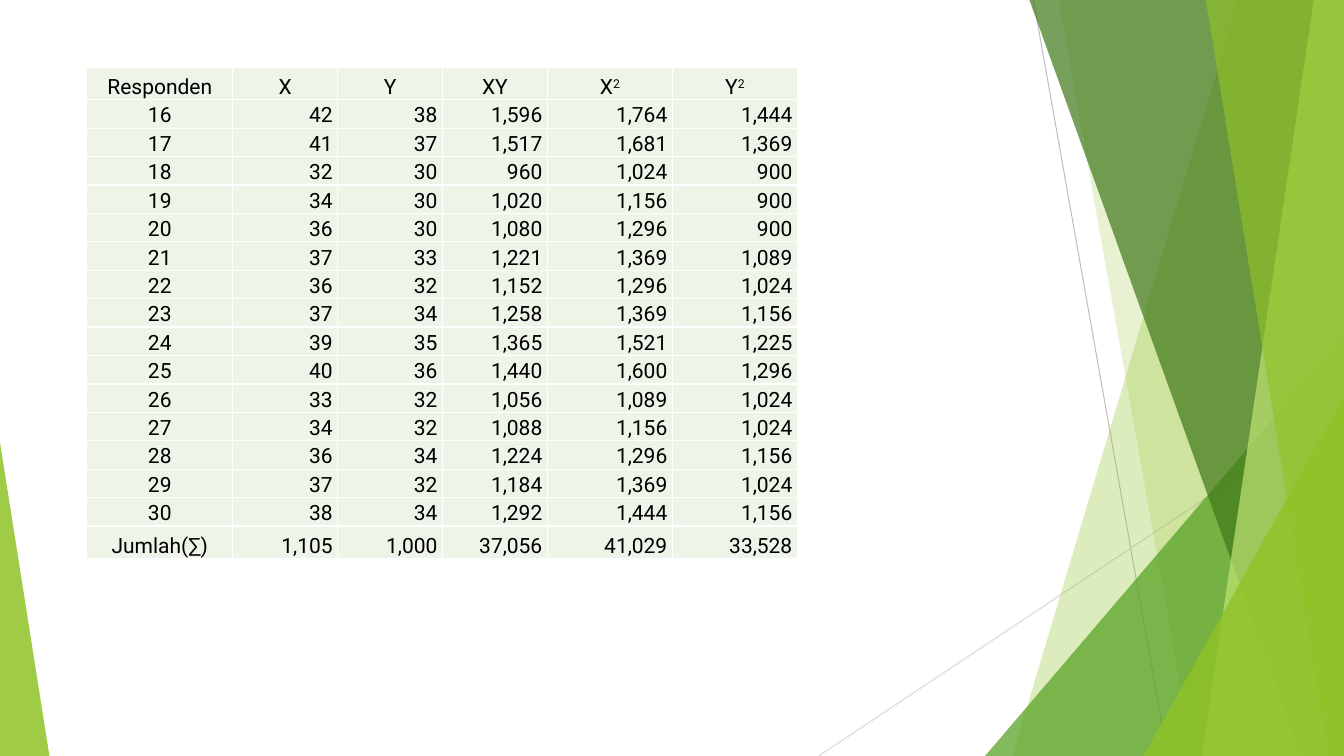
from dataclasses import dataclass

import pptx
import pptx.dml.color
import pptx.enum.shapes
import pptx.enum.text
import pptx.oxml
import pptx.oxml.ns
import pptx.util

Inches = pptx.util.Inches
Pt = pptx.util.Pt
ALIGN = pptx.enum.text.PP_ALIGN


@dataclass(frozen=True)
class Theme:
    font: str = "Roboto"
    body_size: float = 15
    text: str = "000000"
    cell: str = "EEF4E8"
    border: str = "FFFFFF"
    border_width: float = 1
    ray_width: float = 0.75
    ray_dark: str = "BFBFBF"
    ray_light: str = "D9D9D9"
    lime: str = "90C226"
    pale_lime: str = "C0E474"
    green: str = "54A021"
    forest: str = "3F7819"


@dataclass(frozen=True)
class Box:
    left: float
    top: float
    width: float
    height: float


THEME = Theme()
SLIDE = Box(0, 0, 13.33, 7.5)
TABLE = Box(0.86, 0.67, 7.05, 4.84)

# Straight lines: start x, start y, end x, end y, colour
RAYS = [
    (10.25, 0, 11.58, 7.5, THEME.ray_dark),
    (13.33, 4.03, 8.12, 7.5, THEME.ray_light),
]
# Facets from back to front.
# band: x at the top edge, x at the bottom edge; it reaches the right edge
# corner: left, top, width, apex; it stands on the bottom edge
FACETS = [
    ("band", (12.28, 10.04), THEME.lime, 30),
    ("band", (10.5, 11.83), THEME.lime, 20),
    ("corner", (9.77, 3.33, 3.56, 1), THEME.green, 72),
    ("band", (10.21, 12.91), THEME.forest, 70),
    ("band", (13.03, 11.92), THEME.pale_lime, 70),
    ("band", (11.96, 13.18), THEME.lime, 65),
    ("corner", (11.34, 3.93, 1.99, 1), THEME.lime, 80),
    ("corner", (0, 4.39, 0.49, 0), THEME.lime, 85),
]

FIRST_RESPONDENT = 16
SCORES = [
    (42, 38), (41, 37), (32, 30), (34, 30), (36, 30),
    (37, 33), (36, 32), (37, 34), (39, 35), (40, 36),
    (33, 32), (34, 32), (36, 34), (37, 32), (38, 34),
]
# A heading is its base text and its superscript
HEADINGS = [("Responden", ""), ("X", ""), ("Y", ""), ("XY", ""), ("X", "2"), ("Y", "2")]
TOTALS = (1105, 1000, 37056, 41029, 33528)
COLUMN_WIDTHS = (1.45, 1.04, 1.04, 1.04, 1.24, 1.24)
END_ROW_HEIGHT = 0.32


def rgb(colour):
    return pptx.dml.color.RGBColor.from_string(colour)


def add_ray(slide, box, x1, y1, x2, y2, colour):
    ray = slide.shapes.add_connector(
        pptx.enum.shapes.MSO_CONNECTOR.STRAIGHT,
        Inches(box.left + x1), Inches(box.top + y1),
        Inches(box.left + x2), Inches(box.top + y2))
    ray.line.color.rgb = rgb(colour)
    ray.line.width = Pt(THEME.ray_width)
    pptx.oxml.ns.qn("a:effectLst")
    ray._element.spPr.append(
        pptx.oxml.parse_xml(f"<a:effectLst {pptx.oxml.ns.nsdecls('a')}/>"))


def add_band(slide, box, top_x, bottom_x):
    right, bottom = box.left + box.width, box.top + box.height
    corners = [(box.left + top_x, box.top), (right, box.top),
               (right, bottom), (box.left + bottom_x, bottom)]
    start, *others = [(Inches(x), Inches(y)) for x, y in corners]
    outline = slide.shapes.build_freeform(*start)
    outline.add_line_segments(others, close=True)
    return outline.convert_to_shape()


def add_corner(slide, box, left, top, width, apex):
    corner = slide.shapes.add_shape(
        pptx.enum.shapes.MSO_SHAPE.ISOSCELES_TRIANGLE,
        Inches(box.left + left), Inches(box.top + top),
        Inches(width), Inches(box.height - top))
    corner.adjustments[0] = apex
    return corner


def paint(facet, colour, opacity):
    """Fill the facet with a see-through colour; opacity is in percent."""
    facet.shadow.inherit = False
    facet.line.fill.background()
    facet.fill.solid()
    facet.fill.fore_color.rgb = rgb(colour)
    tint = facet._element.spPr.find(".//" + pptx.oxml.ns.qn("a:srgbClr"))
    tint.append(pptx.oxml.parse_xml(
        f"<a:alpha {pptx.oxml.ns.nsdecls('a')} val='{opacity * 1000}'/>"))


def draw_backdrop(slide, box):
    for ray in RAYS:
        add_ray(slide, box, *ray)
    builders = {"band": add_band, "corner": add_corner}
    for kind, measures, colour, opacity in FACETS:
        paint(builders[kind](slide, box, *measures), colour, opacity)


def score_rows():
    """All table rows, each cell as its base text and its superscript."""
    numbers = [(respondent, x, y, x * y, x * x, y * y)
               for respondent, (x, y) in enumerate(SCORES, FIRST_RESPONDENT)]
    numbers.append(("Jumlah(∑)", *TOTALS))
    return [HEADINGS] + [
        [(str(label), "")] + [(f"{value:,}", "") for value in values]
        for label, *values in numbers]


def style_cell(cell):
    properties = cell._tc.get_or_add_tcPr()
    for side in "LRTB":
        properties.append(pptx.oxml.parse_xml(
            f"<a:ln{side} {pptx.oxml.ns.nsdecls('a')} w='{Pt(THEME.border_width)}'>"
            f"<a:solidFill><a:srgbClr val='{THEME.border}'/></a:solidFill></a:ln{side}>"))
    cell.fill.solid()
    cell.fill.fore_color.rgb = rgb(THEME.cell)
    layout = {
        "margin_left": Inches(0.05), "margin_right": Inches(0.05),
        "margin_top": 0, "margin_bottom": 0,
        "vertical_anchor": pptx.enum.text.MSO_ANCHOR.BOTTOM,
    }
    for name, value in layout.items():
        setattr(cell, name, value)


def write_cell(cell, base, superscript, alignment):
    line = cell.text_frame.paragraphs[0]
    line.alignment = alignment
    line.line_spacing = 1.15
    for words, baseline in ((base, 0), (superscript, 30000)):
        if not words:
            continue
        run = line.add_run()
        run.text = words
        run.font.name = THEME.font
        run.font.size = Pt(THEME.body_size)
        run.font.color.rgb = rgb(THEME.text)
        if baseline:
            run._r.get_or_add_rPr().set("baseline", str(baseline))


def draw_score_table(slide, box):
    rows = score_rows()
    scores = slide.shapes.add_table(
        len(rows), len(HEADINGS), Inches(box.left), Inches(box.top),
        Inches(box.width), Inches(box.height)).table
    scores.first_row = scores.horz_banding = False
    for column, width in zip(scores.columns, COLUMN_WIDTHS):
        column.width = Inches(width)
    last = len(rows) - 1
    inner_height = (box.height - 2 * END_ROW_HEIGHT) / (last - 1)
    for r, row in enumerate(rows):
        scores.rows[r].height = Inches(END_ROW_HEIGHT if r in (0, last) else inner_height)
        for c, (base, superscript) in enumerate(row):
            cell = scores.cell(r, c)
            style_cell(cell)
            write_cell(cell, base, superscript,
                       ALIGN.CENTER if r == 0 or c == 0 else ALIGN.RIGHT)


def main():
    deck = pptx.Presentation()
    deck.slide_width = Inches(SLIDE.width)
    deck.slide_height = Inches(SLIDE.height)
    slide = deck.slides.add_slide(deck.slide_layouts[6])
    draw_backdrop(slide, SLIDE)
    draw_score_table(slide, TABLE)
    deck.save("out.pptx")


if __name__ == "__main__":
    main()
